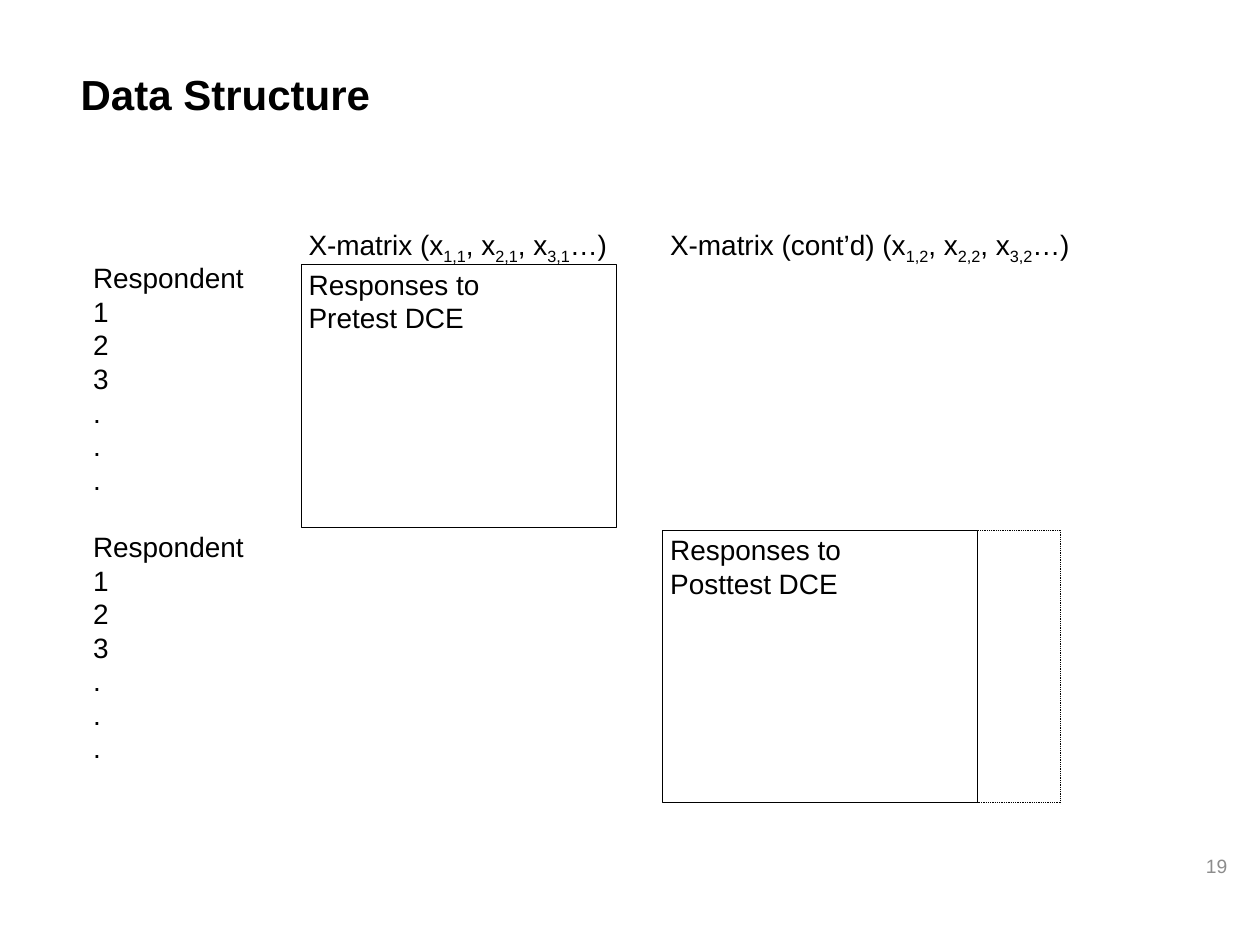
import pptx
import pptx.util
import pptx.dml.color
import pptx.enum.dml
import pptx.enum.shapes
import pptx.enum.text

Inches, Pt = pptx.util.Inches, pptx.util.Pt
ALIGN = pptx.enum.text.PP_ALIGN
ANCHOR = pptx.enum.text.MSO_ANCHOR

# Content
TITLE = "Data Structure"
NUMBER = "19"
ROWS = ["Respondent", "1", "2", "3", ".", ".", "."]
WAVES = [
    # heading, its width, wave index, matrix text, matrix box
    ("X-matrix (x", 2.69, 1, ["Responses to", "Pretest DCE"],
     (2.39, 2.1, 2.5, 2.09)),
    ("X-matrix (cont’d) (x", 3.5, 2, ["Responses to", "Posttest DCE"],
     (5.26, 4.21, 2.5, 2.16)),
]
EXTRA = 0.66  # width of the dotted part beside the last matrix

THEME = {
    "font": "Arial", "ink": "000000", "grey": "8C8C8C",
    "title": 24, "body": 16, "small": 11, "pitch": 19.2, "line": 0.5,
}


def add_run(para, text, size="body", color="ink", bold=False, sub=False):
    run = para.add_run()
    run.text = text
    font = run.font
    font.name, font.size, font.bold = THEME["font"], Pt(THEME[size]), bold
    font.color.rgb = pptx.dml.color.RGBColor.from_string(THEME[color])
    if sub:
        font._element.set("baseline", "-25000")


def fill_text(frame, lines):
    """Write lines, each a list of (text, is subscript) parts."""
    for i, parts in enumerate(lines):
        para = frame.paragraphs[0] if i == 0 else frame.add_paragraph()
        para.alignment = ALIGN.LEFT
        para.line_spacing = Pt(THEME["pitch"])
        for text, sub in parts:
            add_run(para, text, sub=sub)


def add_text(slide, box, lines):
    frame = slide.shapes.add_textbox(*map(Inches, box)).text_frame
    frame.word_wrap = False
    fill_text(frame, lines)


def add_box(slide, box, dash=None):
    shape = slide.shapes.add_shape(
        pptx.enum.shapes.MSO_SHAPE.RECTANGLE, *map(Inches, box))
    shape.shadow.inherit = False
    shape.fill.background()
    shape.line.color.rgb = pptx.dml.color.RGBColor.from_string(THEME["ink"])
    shape.line.width = Pt(THEME["line"])
    if dash:
        shape.line.dash_style = dash
    return shape


def plain(lines):
    return [[(line, False)] for line in lines]


def heading(start, wave):
    parts = [(start, False)]
    for item in (1, 2, 3):
        parts += [(f"{item},{wave}", True), (", x" if item < 3 else "…)", False)]
    return parts


def main():
    deck = pptx.Presentation()
    deck.slide_width, deck.slide_height = Inches(10), Inches(7.5)
    slide = deck.slides.add_slide(deck.slide_layouts[5])

    # Title
    title = slide.shapes.title
    title.left, title.top, title.width, title.height = map(
        Inches, (0.54, 0.25, 6.79, 0.98))
    title.text_frame.vertical_anchor = ANCHOR.MIDDLE
    para = title.text_frame.paragraphs[0]
    para.alignment = ALIGN.LEFT
    add_run(para, TITLE, "title", bold=True)

    # Slide number
    frame = slide.shapes.add_textbox(
        *map(Inches, (7.51, 6.67, 2.33, 0.4))).text_frame
    frame.word_wrap = True
    frame.vertical_anchor = ANCHOR.MIDDLE
    para = frame.paragraphs[0]
    para.alignment = ALIGN.RIGHT
    add_run(para, NUMBER, "small", "grey")

    # Respondent rows, one list per wave with a free line between
    pitch = THEME["pitch"] / 72
    step = (len(ROWS) + 1) * pitch
    for i, (start, wide, wave, text, box) in enumerate(WAVES):
        add_text(slide, (0.64, 2.02 + i * step, 1.41, len(ROWS) * pitch + 0.1),
                 plain(ROWS))

        # Heading and matrix
        left, top, width, height = box
        add_text(slide, (left - 0.04, 1.79, wide, 0.37),
                 [heading(start, wave)])
        frame = add_box(slide, box).text_frame
        frame.word_wrap = True
        frame.vertical_anchor = ANCHOR.TOP
        frame.margin_left, frame.margin_top = Inches(0.06), Inches(0.02)
        fill_text(frame, plain(text))

    # Dotted extension of the last matrix
    add_box(slide, (left + width, top, EXTRA, height),
            pptx.enum.dml.MSO_LINE.ROUND_DOT)

    deck.save("out.pptx")


if __name__ == "__main__":
    main()
